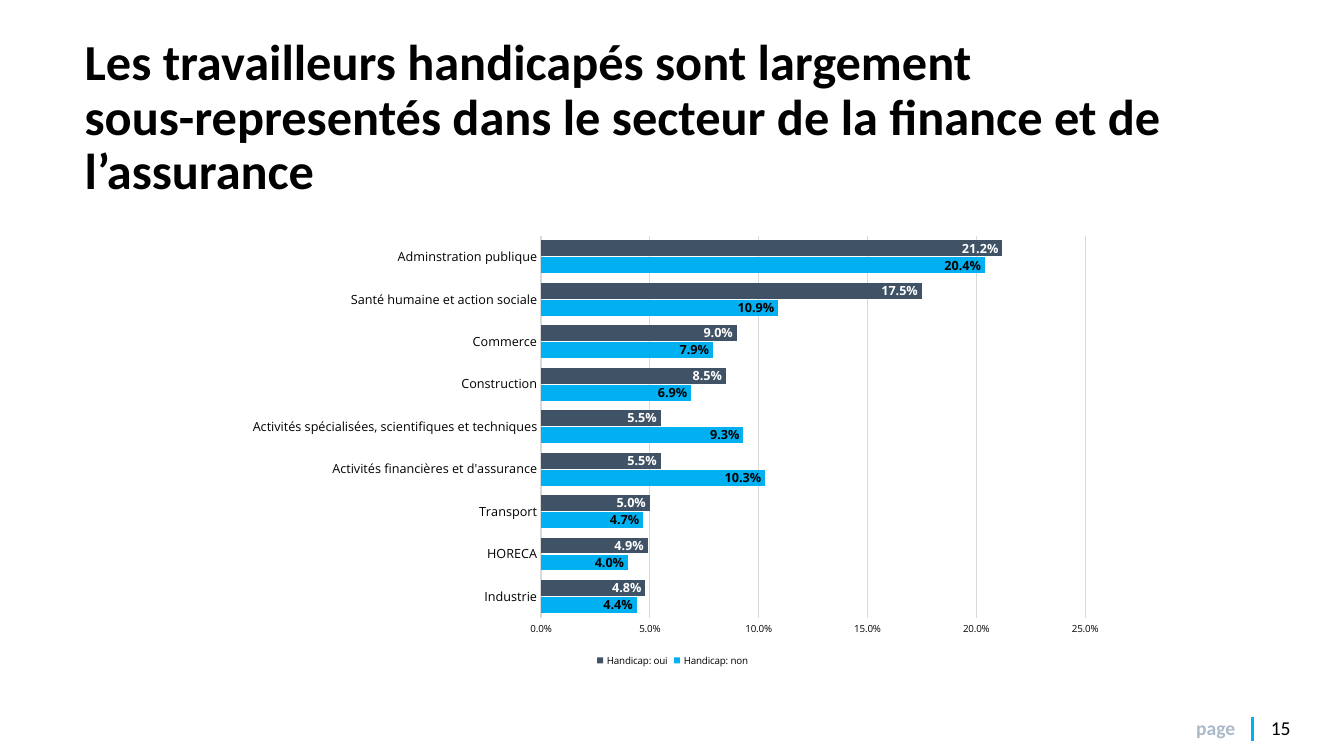
"""Build the slide on the sectors that employ workers with and without a disability."""
from dataclasses import dataclass

from lxml.etree import SubElement
from pptx import Presentation
from pptx.chart.data import CategoryChartData
from pptx.dml.color import RGBColor
from pptx.enum.chart import XL_CHART_TYPE, XL_LABEL_POSITION, XL_LEGEND_POSITION, XL_TICK_MARK
from pptx.enum.shapes import MSO_CONNECTOR
from pptx.enum.text import MSO_ANCHOR, MSO_AUTO_SIZE
from pptx.oxml.ns import qn
from pptx.util import Inches, Pt


@dataclass(frozen=True)
class Theme:
    heading_font: str = "Calibri"
    chart_font: str = "Open Sans"
    black: str = "000000"
    white: str = "FFFFFF"
    blue: str = "00B0F0"
    slate: str = "405265"
    muted: str = "ABBAC9"
    grid: str = "D9D9D9"
    title_size: int = 36
    footer_size: int = 14
    label_size: int = 9
    small_size: int = 7


THEME = Theme()
WIDTH, HEIGHT = 13.33, 7.5
TITLE = ("Les travailleurs handicapés sont largement \v"
         "sous-representés dans le secteur de la finance et de l’assurance")
SECTORS = [
    ("Industrie", 0.044, 0.048),
    ("HORECA", 0.04, 0.049),
    ("Transport", 0.047, 0.05),
    ("Activités financières et d'assurance", 0.103, 0.055),
    ("Activités spécialisées, scientifiques et techniques", 0.093, 0.055),
    ("Construction", 0.069, 0.085),
    ("Commerce", 0.079, 0.09),
    ("Santé humaine et action sociale", 0.109, 0.175),
    ("Adminstration publique", 0.204, 0.212),
]
SERIES = [
    ("Handicap: non", THEME.blue, THEME.black),
    ("Handicap: oui", THEME.slate, THEME.white),
]
PERCENT = "0.0%"
PLOT_AREA = {"x": 0.35, "y": 0.02, "w": 0.62, "h": 0.86}


def box(left, top, width, height):
    """Turn shares of the slide's size into a position and a size."""
    return (Inches(WIDTH * left), Inches(HEIGHT * top),
            Inches(WIDTH * width), Inches(HEIGHT * height))


def style_font(font, size, color=THEME.black, bold=False, name=THEME.chart_font):
    """Format a font of a run or of a chart part."""
    font.size, font.bold, font.name = Pt(size), bold, name
    font.color.rgb = RGBColor.from_string(color)


def add_text(p, text, **style):
    """Add formatted text to a paragraph, with line breaks at vertical tabs."""
    for i, line in enumerate(text.split("\v")):
        if i:
            p.add_line_break()
        r = p.add_run()
        r.text = line
        style_font(r.font, name=THEME.heading_font, **style)


def clear_margins(tf):
    """Remove the inner margins of a text frame."""
    tf.margin_left = tf.margin_top = tf.margin_right = tf.margin_bottom = 0


def add_title(slide):
    """Place and fill the title placeholder."""
    sp = slide.shapes.title
    sp.left, sp.top, sp.width, sp.height = box(0.063, 0.053, 0.898, 0.208)
    tf = sp.text_frame
    clear_margins(tf)
    tf.word_wrap, tf.auto_size = True, MSO_AUTO_SIZE.NONE
    tf.vertical_anchor = MSO_ANCHOR.MIDDLE
    p = tf.paragraphs[0]
    p.line_spacing = 0.9
    add_text(p, TITLE, size=THEME.title_size, bold=True)


def add_page_number(slide, number):
    """Add the page label, its number and the bar between them."""
    sp = slide.shapes.add_textbox(*box(0.89, 0.947, 0.11, 0.027))
    tf = sp.text_frame
    clear_margins(tf)
    tf.word_wrap = True
    p = tf.paragraphs[0]
    tabs = SubElement(p._p.get_or_add_pPr(), qn("a:tabLst"))
    SubElement(tabs, qn("a:tab"), pos=str(Inches(0.74)), algn="l")
    add_text(p, "page\t", size=THEME.footer_size, color=THEME.muted, bold=True)
    add_text(p, number, size=THEME.footer_size)

    x, top, _, height = box(0.932, 0.948, 0, 0.032)
    bar = slide.shapes.add_connector(MSO_CONNECTOR.STRAIGHT, x, top, x, top + height)
    bar.line.color.rgb = RGBColor.from_string(THEME.blue)
    bar.line.width = Pt(2.25)
    SubElement(bar._element.spPr, qn("a:effectLst"))


def style_axis(axis, size):
    """Format the labels of an axis and hide its tick marks."""
    axis.major_tick_mark = axis.minor_tick_mark = XL_TICK_MARK.NONE
    style_font(axis.tick_labels.font, size)


def style_line(line):
    """Give a chart line the thin grid look."""
    line.color.rgb = RGBColor.from_string(THEME.grid)
    line.width = Pt(0.75)


def style_series(series, fill, label_color):
    """Colour a series and label its bars at the inner end."""
    series.format.fill.solid()
    series.format.fill.fore_color.rgb = RGBColor.from_string(fill)
    series.invert_if_negative = False
    labels = series.data_labels
    labels.show_value = True
    labels.position = XL_LABEL_POSITION.INSIDE_END
    labels.number_format, labels.number_format_is_linked = PERCENT, False
    style_font(labels.font, THEME.label_size, label_color, bold=True)


def fix_plot_area(chart):
    """Fix the inner plot area at shares of the chart's size."""
    area = chart._chartSpace.chart.plotArea
    for old in area.findall(qn("c:layout")):
        area.remove(old)
    layout = area.makeelement(qn("c:layout"))
    area.insert(0, layout)
    manual = SubElement(layout, qn("c:manualLayout"))
    modes = {"layoutTarget": "inner", "xMode": "edge", "yMode": "edge"}
    for tag, value in (modes | PLOT_AREA).items():
        SubElement(manual, qn(f"c:{tag}"), val=str(value))


def add_sector_chart(slide):
    """Add the bar chart that compares both groups by sector."""
    names, *columns = zip(*SECTORS)
    data = CategoryChartData(number_format=PERCENT)
    data.categories = names
    for (name, _, _), values in zip(SERIES, columns):
        data.add_series(name, values)
    frame = slide.shapes.add_chart(
        XL_CHART_TYPE.BAR_CLUSTERED, *box(0.174, 0.3, 0.653, 0.588), data)
    chart = frame.chart
    chart.has_title = False
    style_font(chart.font, THEME.small_size)
    fix_plot_area(chart)

    plot = chart.plots[0]
    plot.gap_width, plot.overlap, plot.vary_by_categories = 62, -8, False
    for series, (_, fill, label_color) in zip(plot.series, SERIES):
        style_series(series, fill, label_color)

    style_axis(chart.category_axis, THEME.label_size)
    style_line(chart.category_axis.format.line)
    axis = chart.value_axis
    style_axis(axis, THEME.small_size)
    axis.minimum_scale, axis.maximum_scale, axis.major_unit = 0, 0.25, 0.05
    axis.tick_labels.number_format = PERCENT
    axis.tick_labels.number_format_is_linked = False
    axis.format.line.fill.background()
    style_line(axis.major_gridlines.format.line)

    chart.has_legend = True
    chart.legend.position = XL_LEGEND_POSITION.BOTTOM
    chart.legend.include_in_layout = False
    style_font(chart.legend.font, THEME.small_size)


def main():
    """Build and save the presentation."""
    prs = Presentation()
    prs.slide_width, prs.slide_height = Inches(WIDTH), Inches(HEIGHT)
    slide = prs.slides.add_slide(prs.slide_layouts.get_by_name("Title Only"))
    add_page_number(slide, "15")
    add_title(slide)
    for p in slide.shapes.title.text_frame.paragraphs:
        p.alignment = 1
    add_sector_chart(slide)
    prs.save("out.pptx")


if __name__ == "__main__":
    main()
